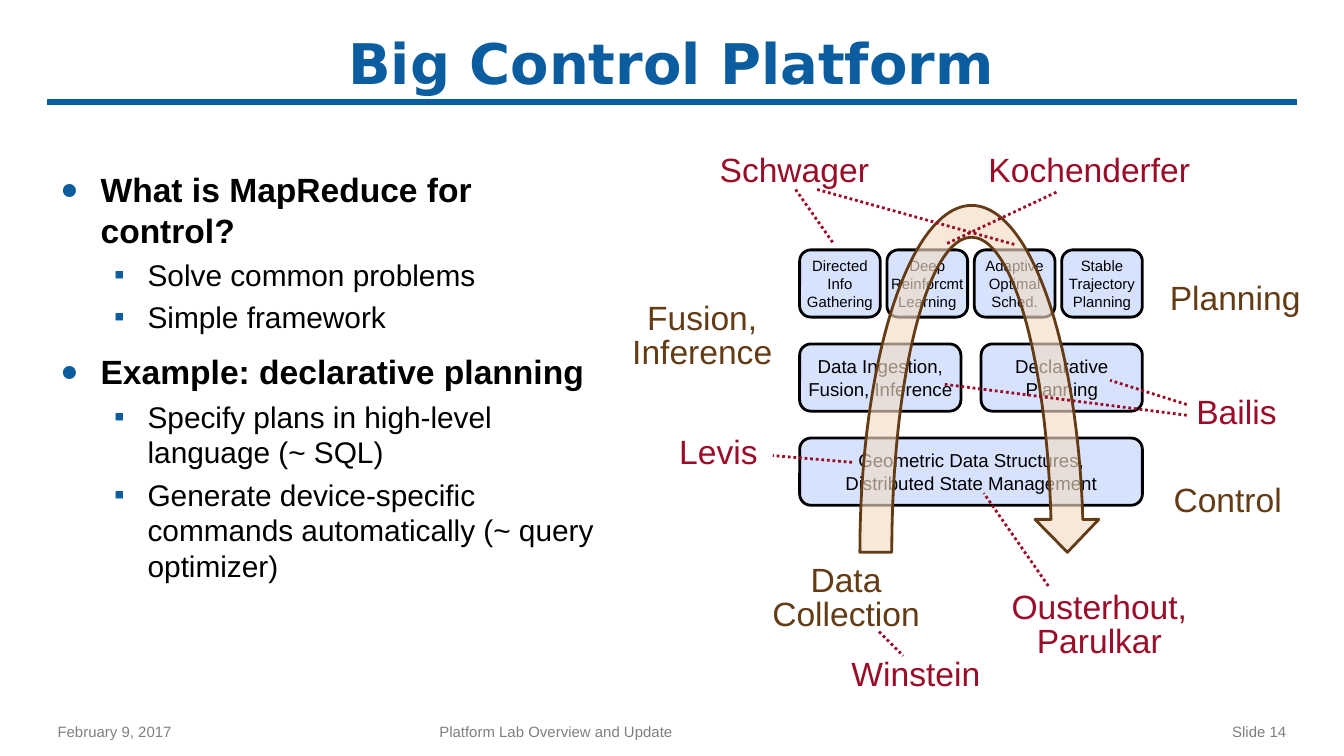
from lxml import etree
from pptx import Presentation
from pptx import util as u
from pptx.dml.color import RGBColor
from pptx.enum import dml, shapes, text
from pptx.oxml import ns

COLORS = {"blue": "0C5DA0", "grey": "7F7F7F", "black": "000000", "box": "D7E2FF",
          "arrow": "F3DCC4", "brown": "633B14", "red": "9A0C27"}
ALIGN = {"left": text.PP_ALIGN.LEFT, "center": text.PP_ALIGN.CENTER, "right": text.PP_ALIGN.RIGHT}


def grid(*steps):
    """Turn columns or rows of a tenth of an inch into lengths."""
    return [u.Inches(step / 10) for step in steps]


def color(name):
    """Look up a named colour."""
    return RGBColor.from_string(COLORS[name])


def add_xml(parent, tag, **attributes):
    """Append a drawing element with its attributes."""
    return etree.SubElement(parent, ns.qn(tag), attributes)


def write(para, words, size=18, ink="black", bold=False, font="Arial", align="left", leading=None):
    """Add formatted words to a paragraph."""
    para.alignment = ALIGN[align]
    if leading:
        para.line_spacing = u.Pt(leading)
    span = para.add_run()
    span.text = words
    span.font.size, span.font.bold, span.font.name = u.Pt(size), bold, font
    span.font.color.rgb = color(ink)


class Slide:
    """Holds the style and the page being built."""

    def __init__(self, page):
        """Remember the page."""
        self.page = page

    def fill_frame(self, frame, words, tight=False, wrap=True, middle=True, **style):
        """Write one paragraph for each line of words."""
        frame.word_wrap = wrap
        frame.vertical_anchor = text.MSO_ANCHOR.MIDDLE if middle else text.MSO_ANCHOR.TOP
        if tight:
            frame.margin_left = frame.margin_top = frame.margin_right = frame.margin_bottom = 0
        for number, line in enumerate(words.split("\n")):
            write(frame.add_paragraph() if number else frame.paragraphs[0], line, **style)

    def caption(self, place, words, **style):
        """Place a wrapping text box centred vertically."""
        box = self.page.shapes.add_textbox(*grid(*place))
        self.fill_frame(box.text_frame, words, **style)

    def label(self, place, words, ink):
        """Place a tight label that grows with its text."""
        box = self.page.shapes.add_textbox(*grid(*place, 2.5 * len(words.split("\n"))))
        self.fill_frame(box.text_frame, words, tight=True, wrap=False, middle=False,
                        ink=ink, align="center", leading=18)
        box.text_frame.auto_size = text.MSO_AUTO_SIZE.SHAPE_TO_FIT_TEXT

    def bullets(self, place, items):
        """Place a two-level bulleted list."""
        frame = self.page.shapes.add_textbox(*grid(*place)).text_frame
        frame.word_wrap = True
        for number, (level, words) in enumerate(items):
            para = frame.add_paragraph() if number else frame.paragraphs[0]
            indent, hang, gap, size, mark, share = LEVELS[level]
            write(para, words, size=size, bold=level == 0)
            para.level = level
            para.space_before = u.Pt(gap)
            format_node = para._p.get_or_add_pPr()
            format_node.set("marL", str(u.Inches(indent)))
            format_node.set("indent", str(-u.Inches(hang)))
            add_xml(add_xml(format_node, "a:buClr"), "a:srgbClr", val=COLORS["blue"])
            add_xml(format_node, "a:buSzPct", val=str(share * 1000))
            add_xml(format_node, "a:buFont", typeface="Arial")
            add_xml(format_node, "a:buChar", char=mark)

    def shape(self, kind, place, fill, edge):
        """Place a filled and outlined preset shape."""
        shape = self.page.shapes.add_shape(kind, *grid(*place))
        shape.shadow.inherit = False
        shape.fill.solid()
        shape.fill.fore_color.rgb = color(fill)
        shape.line.color.rgb = color(edge)
        shape.line.width = u.Pt(1.5)
        return shape

    def layer(self, top, size, names):
        """Spread equal boxes across one layer of the stack."""
        gap = 0.5 if len(names) > 2 else 1.5
        width = (STACK_WIDTH - gap * (len(names) - 1)) / len(names)
        for number, words in enumerate(names):
            left = STACK_LEFT + number * (width + gap)
            box = self.shape(shapes.MSO_SHAPE.ROUNDED_RECTANGLE, (left, top, width, 5), "box", "black")
            self.fill_frame(box.text_frame, words, tight=True, size=size, align="center")

    def flow_arrow(self, place):
        """Place the translucent arrow over the stack."""
        arrow = self.shape(shapes.MSO_SHAPE.CIRCULAR_ARROW, place, "arrow", "brown")
        tint = arrow._element.spPr.find(ns.qn("a:solidFill"))[0]
        add_xml(tint, "a:alpha", val="63000")

    def line(self, ends, ink, width, dotted=False):
        """Draw a straight line between two grid points."""
        line = self.page.shapes.add_connector(shapes.MSO_CONNECTOR.STRAIGHT, *grid(*ends))
        line.line.color.rgb = color(ink)
        line.line.width = u.Pt(width)
        if dotted:
            line.line.dash_style = dml.MSO_LINE.ROUND_DOT
        add_xml(line._element.spPr, "a:effectLst")


STACK_LEFT, STACK_WIDTH = 59.5, 25.5
LEVELS = [(0.3, 0.3, 9, 18, "●", 90), (0.65, 0.25, 3.5, 16, "▪", 100)]
POINTS = [(0, "What is MapReduce for control?"), (1, "Solve common problems"),
          (1, "Simple framework"), (0, "Example: declarative planning"),
          (1, "Specify plans in high-level language (~ SQL)"),
          (1, "Generate device-specific commands automatically (~ query optimizer)")]
FOOTERS = [(3.3, 25, "February 9, 2017", "left"),
           (31.7, 37.5, "Platform Lab Overview and Update", "left"),
           (71.7, 25, "Slide 14", "right")]
LAYERS = [(18.6, 8, ["Directed\nInfo\nGathering", "Deep\nReinforcmt\nLearning",
                     "Adaptive\nOptimal\nSched.", "Stable\nTrajectory\nPlanning"]),
          (25.6, 10, ["Data Ingestion,\nFusion, Inference", "Declarative\nPlanning"]),
          (32.6, 10, ["Geometric Data Structures,\nDistributed State Management"])]
LABELS = {"brown": [(57.4, 42.1, 11.1, "Data\nCollection"), (47, 22.6, 10.5, "Fusion,\nInference"),
                    (87, 21.1, 9.8, "Planning"), (87.3, 36.1, 8.1, "Control")],
          "red": [(53.5, 11.6, 11.2, "Schwager"), (63.3, 49.1, 9.7, "Winstein"),
                  (73.5, 11.6, 15.1, "Kochenderfer"), (89, 29.6, 6, "Bailis"),
                  (50.5, 32.6, 5.9, "Levis"), (75.2, 44.1, 13.2, "Ousterhout,\nParulkar")]}
LEADERS = [(59.2, 14.1, 62, 18.1), (78.6, 14.3, 70.3, 18.2), (60.8, 14.1, 75.5, 18.2),
           (88.3, 30.1, 82.6, 28.3), (88.3, 30.9, 70.3, 28.6), (78, 43.6, 73.2, 36.7),
           (63.4, 34.4, 57.5, 33.9), (65.4, 47, 67.2, 48.8)]


def main():
    """Build the slide and save it."""
    deck = Presentation()
    deck.slide_width, deck.slide_height = grid(100, 56.25)
    slide = Slide(deck.slides.add_slide(deck.slide_layouts[6]))
    slide.line((3.5, 7.6, 96.5, 7.6), "blue", 3.5)
    for left, width, words, align in FOOTERS:
        slide.caption((left, 53.2, width, 2.4), words, size=8, ink="grey", align=align)
    slide.caption((3.3, 1.6, 93.3, 6), "Big Control Platform", size=30, ink="blue",
                  bold=True, font="DejaVu Sans", align="center")
    slide.bullets((3.5, 12.1, 42.5, 38.5), POINTS)
    for layer in LAYERS:
        slide.layer(*layer)
    slide.flow_arrow((62.8, 14.1, 19, 54))
    for ink, labels in LABELS.items():
        for *place, words in labels:
            slide.label(place, words, ink)
    for ends in LEADERS:
        slide.line(ends, "red", 1.5, dotted=True)
    deck.save("out.pptx")


if __name__ == "__main__":
    main()
